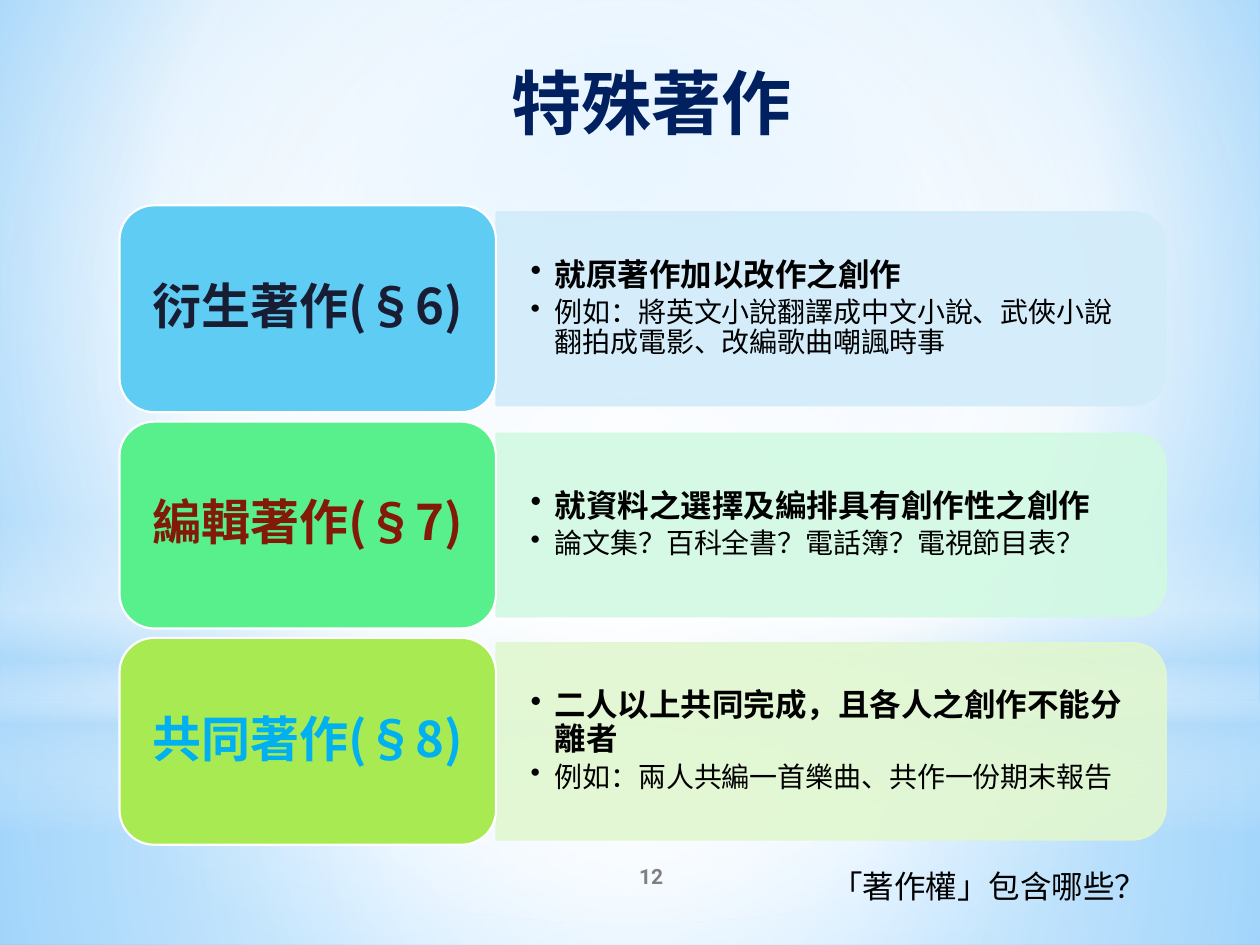
from lxml.etree import SubElement
from pptx import Presentation
from pptx.dml.color import RGBColor
from pptx.enum.shapes import MSO_SHAPE
from pptx.enum.text import MSO_ANCHOR, PP_ALIGN
from pptx.oxml.ns import qn
from pptx.util import Cm, Pt

WHITE = RGBColor(0xFF, 0xFF, 0xFF)
BLACK = RGBColor(0x00, 0x00, 0x00)
GRAY = RGBColor(0x80, 0x80, 0x80)
NAVY = RGBColor(0x00, 0x20, 0x60)
MIST = RGBColor(0xB4, 0xDC, 0xFA)
PALE_SKY = RGBColor(0x9E, 0xD5, 0xFF)
DEEP_SKY = RGBColor(0x5B, 0xB9, 0xFF)
INK = RGBColor(0x19, 0x1D, 0x34)
MAROON = RGBColor(0x82, 0x1A, 0x08)
AZURE = RGBColor(0x00, 0xB0, 0xF0)
BLUE, BLUE_TINT = RGBColor(0x5E, 0xCC, 0xF3), RGBColor(0xD2, 0xEC, 0xFA)
GREEN, GREEN_TINT = RGBColor(0x58, 0xEF, 0x8D), RGBColor(0xD1, 0xF9, 0xE3)
LIME, LIME_TINT = RGBColor(0xA7, 0xEA, 0x52), RGBColor(0xE1, 0xF7, 0xD0)

SLIDE_WIDTH, SLIDE_HEIGHT = 25.4, 19.05
ROW_TOP, ROW_PITCH = 4.14, 4.36
LABEL_LEFT, LABEL_WIDTH, LABEL_HEIGHT = 2.41, 7.59, 4.17
PANEL_LEFT, PANEL_WIDTH = 10.01, 13.49
CENTER = (50, 50, 50, 50)

# label, label colour, block colour, panel colour, panel height, heading, example
ROWS = [
    ("衍生著作(§6)", INK, BLUE, BLUE_TINT, 3.89, "就原著作加以改作之創作",
     "例如：將英文小說翻譯成中文小說、武俠小說翻拍成電影、改編歌曲嘲諷時事"),
    ("編輯著作(§7)", MAROON, GREEN, GREEN_TINT, 3.68, "就資料之選擇及編排具有創作性之創作",
     "論文集？百科全書？電話簿？電視節目表？"),
    ("共同著作(§8)", AZURE, LIME, LIME_TINT, 3.96, "二人以上共同完成，且各人之創作不能分離者",
     "例如：兩人共編一首樂曲、共作一份期末報告"),
]


def set_alpha(holder, percent):
    for color in holder.iter(qn("a:srgbClr")):
        SubElement(color, qn("a:alpha"), val=str(percent * 1000))


def make_gradient(holder, stops, focus=None):
    """Turn the solid fill in holder into a circular (with focus) or vertical gradient."""
    solid = holder.find(qn("a:solidFill"))
    gradient = solid.makeelement(qn("a:gradFill"), rotWithShape="1")
    stop_list = SubElement(gradient, qn("a:gsLst"))
    for position, color, opacity in stops:
        stop = SubElement(stop_list, qn("a:gs"), pos=str(position * 1000))
        SubElement(stop, qn("a:srgbClr"), val=str(color))
        set_alpha(stop, opacity)
    if focus:
        circle = SubElement(gradient, qn("a:path"), {"path": "circle"})
        sides = {side: str(value * 1000) for side, value in zip("ltrb", focus)}
        SubElement(circle, qn("a:fillToRect"), sides)
    else:
        SubElement(gradient, qn("a:lin"), ang="5400000", scaled="0")
    holder.replace(solid, gradient)


class SlideBuilder:
    def __init__(self, slide, font="Noto Sans CJK SC"):
        self.slide = slide
        self.font = font

    def background(self, stops, focus):
        fill = self.slide.background.fill
        fill.solid()
        fill.fore_color.rgb = WHITE
        make_gradient(self.slide.element.find(".//" + qn("p:bgPr")), stops, focus)

    def shape(self, kind, left, top, width, height, color):
        shape = self.slide.shapes.add_shape(kind, Cm(left), Cm(top), Cm(width), Cm(height))
        shape.shadow.inherit = False
        shape.fill.solid()
        shape.fill.fore_color.rgb = color
        shape.line.fill.background()
        return shape

    def outline(self, shape, color):
        shape.line.color.rgb = color
        shape.line.width = Pt(1.25)

    def wash(self, kind, top, height, stops, focus=None):
        """Full-width translucent gradient layer."""
        layer = self.shape(kind, 0, top, SLIDE_WIDTH, height, WHITE)
        make_gradient(layer.element.spPr, stops, focus)

    def frame(self, shape, inset_x, inset_y, anchor=MSO_ANCHOR.MIDDLE):
        frame = shape.text_frame
        frame.word_wrap = True
        frame.vertical_anchor = anchor
        frame.margin_left = frame.margin_right = Cm(inset_x)
        frame.margin_top = frame.margin_bottom = Cm(inset_y)
        return frame

    def run(self, paragraph, text, size, color, bold=False, font=None):
        run = paragraph.add_run()
        run.text = text
        run.font.size = Pt(size)
        run.font.bold = bold
        run.font.color.rgb = color
        run.font.name = font or self.font
        SubElement(run.font._element, qn("a:ea"), typeface=font or self.font)

    def text(self, left, top, width, height, text, size, color, bold=False,
             align=PP_ALIGN.CENTER, anchor=MSO_ANCHOR.MIDDLE, font=None):
        box = self.slide.shapes.add_textbox(Cm(left), Cm(top), Cm(width), Cm(height))
        paragraph = self.frame(box, 0.25, 0.13, anchor).paragraphs[0]
        paragraph.alignment = align
        self.run(paragraph, text, size, color, bold, font)

    def label(self, top, text, text_color, color):
        block = self.shape(MSO_SHAPE.ROUNDED_RECTANGLE, LABEL_LEFT, top,
                           LABEL_WIDTH, LABEL_HEIGHT, color)
        self.outline(block, WHITE)
        paragraph = self.frame(block, 0.3, 0.15).paragraphs[0]
        paragraph.alignment = PP_ALIGN.CENTER
        paragraph.line_spacing = 0.9
        self.run(paragraph, text, 28, text_color, bold=True)

    def panel(self, middle, height, color):
        """Panel rounded on its right side: a top-rounded shape turned a quarter."""
        panel = self.shape(MSO_SHAPE.ROUND_2_SAME_RECTANGLE,
                           PANEL_LEFT + (PANEL_WIDTH - height) / 2,
                           middle - PANEL_WIDTH / 2, height, PANEL_WIDTH, color)
        panel.rotation = 90
        self.outline(panel, color)
        set_alpha(panel.element.spPr, 90)

    def bullets(self, middle, height, heading, example):
        box = self.slide.shapes.add_textbox(Cm(PANEL_LEFT), Cm(middle - height / 2),
                                            Cm(PANEL_WIDTH - 0.18), Cm(height))
        frame = self.frame(box, 0.69, 0.36)
        lines = [(frame.paragraphs[0], heading, 18, True),
                 (frame.add_paragraph(), example, 16, False)]
        for paragraph, text, size, bold in lines:
            paragraph.line_spacing = 0.9
            paragraph.space_after = Pt(3)
            properties = paragraph._p.get_or_add_pPr()
            properties.set("marL", str(Cm(0.48)))
            properties.set("indent", str(-Cm(0.48)))
            SubElement(properties, qn("a:buChar"), char="•")
            self.run(paragraph, text, size, BLACK, bold)


def main():
    deck = Presentation()
    deck.slide_width, deck.slide_height = Cm(SLIDE_WIDTH), Cm(SLIDE_HEIGHT)
    page = SlideBuilder(deck.slides.add_slide(deck.slide_layouts[6]))

    page.background([(0, PALE_SKY, 100), (60, WHITE, 100), (100, DEEP_SKY, 100)],
                    (20, 10, 20, 60))
    page.wash(MSO_SHAPE.RECTANGLE, 14.17, 4.88,
              [(0, WHITE, 91), (37, WHITE, 76), (100, MIST, 79)], CENTER)
    page.wash(MSO_SHAPE.RECTANGLE, 0, 14.17,
              [(0, WHITE, 89), (48, WHITE, 62), (100, MIST, 79)], CENTER)
    page.wash(MSO_SHAPE.RECTANGLE, 10.46, 6.35,
              [(0, WHITE, 0), (29, WHITE, 30), (45, MIST, 40),
               (55, WHITE, 26), (65, MIST, 60), (100, WHITE, 0)])
    page.wash(MSO_SHAPE.OVAL, 4.45, 14.17, [(0, WHITE, 100), (56, WHITE, 0)], CENTER)

    page.text(1.7, 0.91, 22.86, 2.26, "特殊著作", 40, NAVY, bold=True)
    for index, (label, ink, color, tint, height, heading, example) in enumerate(ROWS):
        top = ROW_TOP + index * ROW_PITCH
        middle = top + LABEL_HEIGHT / 2
        page.panel(middle, height, tint)
        page.bullets(middle, height - 0.38, heading, example)
        page.label(top, label, ink, color)

    page.text(10.59, 17.15, 5.08, 1.02, "12", 12, GRAY, bold=True, font="Roboto")
    page.text(16.51, 17.35, 8.59, 1.02, "「著作權」包含哪些？", 18, BLACK,
              align=PP_ALIGN.LEFT, anchor=MSO_ANCHOR.TOP, font="Roboto")
    deck.save("out.pptx")


if __name__ == "__main__":
    main()
